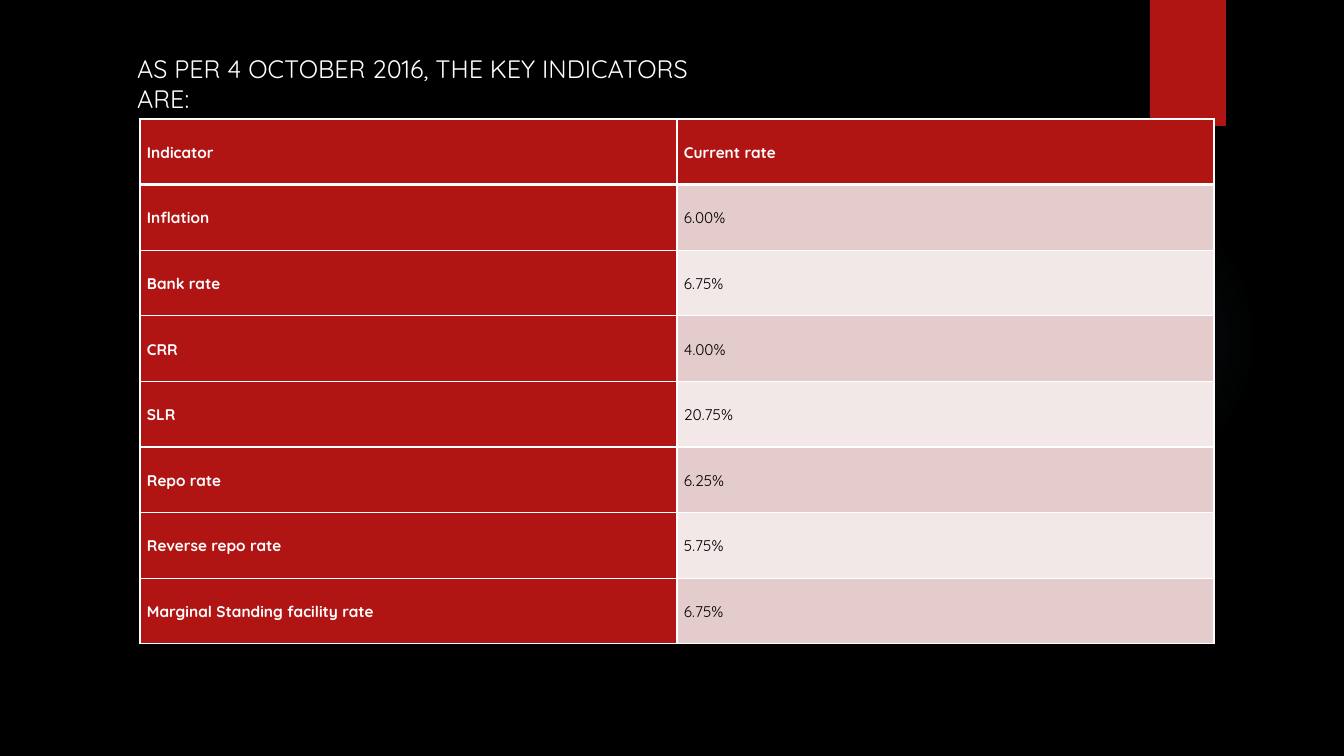
from lxml import etree
from pptx import Presentation
from pptx.dml.color import RGBColor
from pptx.enum.shapes import MSO_SHAPE
from pptx.enum.text import MSO_ANCHOR, PP_ALIGN
from pptx.oxml import parse_xml
from pptx.oxml.ns import nsdecls, qn
from pptx.util import Pt

# Content
TITLE = "AS PER 4 OCTOBER 2016, THE KEY INDICATORS ARE:"
INDICATORS = [
    ("Indicator", "Current rate"),
    ("Inflation", "6.00%"),
    ("Bank rate", "6.75%"),
    ("CRR", "4.00%"),
    ("SLR", "20.75%"),
    ("Repo rate", "6.25%"),
    ("Reverse repo rate", "5.75%"),
    ("Marginal Standing facility rate", "6.75%"),
]

# Style and layout in px
FONT = "Quicksand"
BLACK, WHITE, RED, TEAL = "000000", "FFFFFF", "B01513", "50B9C1"
BANDS = ("F2E8E7", "E4CCCC")
GLOW_STOPS = [(0, 7), (36, 6), (69, 0)]  # position and opacity, percent
SLIDE_SIZE = (1344, 756)
GLOW_BOX = (949, 184, 310, 310)
TAB_BOX = (1150, 0, 76, 126)
TITLE_BOX = (127, 48, 578, 74)
TABLE_BOX = (140, 119, 1074, 525)
EMU_PER_PX = 12192000 / SLIDE_SIZE[0]


def px(length):
    return round(length * EMU_PER_PX)


def color(value):
    return RGBColor.from_string(value)


def add_plain_shape(slide, kind, box, fill):
    shape = slide.shapes.add_shape(kind, *map(px, box))
    shape.shadow.inherit = False
    shape.fill.solid()
    shape.fill.fore_color.rgb = color(fill)
    shape.line.fill.background()
    return shape


def set_radial_fade(shape, value, stops):
    stop_xml = "".join(
        f'<a:gs pos="{position * 1000}"><a:srgbClr val="{value}">'
        f'<a:alpha val="{opacity * 1000}"/></a:srgbClr></a:gs>'
        for position, opacity in stops
    )
    gradient = parse_xml(
        f'<a:gradFill {nsdecls("a")}><a:gsLst>{stop_xml}</a:gsLst>'
        '<a:path path="circle"><a:fillToRect l="50000" t="50000" '
        'r="50000" b="50000"/></a:path></a:gradFill>'
    )
    properties = shape.element.spPr
    properties.replace(properties.find(qn("a:solidFill")), gradient)


def set_borders(cell, widths):
    properties = cell._tc.get_or_add_tcPr()
    for side, width in zip("LRTB", widths):
        line = etree.SubElement(properties, qn(f"a:ln{side}"), w=str(Pt(width)))
        fill = etree.SubElement(line, qn("a:solidFill"))
        etree.SubElement(fill, qn("a:srgbClr"), val=WHITE)


def add_text(paragraph, text, size, value, bold=False):
    run = paragraph.add_run()
    run.text = text
    run.font.name = FONT
    run.font.size = Pt(size)
    run.font.bold = bold
    run.font.color.rgb = color(value)


presentation = Presentation()
presentation.slide_width, presentation.slide_height = map(px, SLIDE_SIZE)
slide = presentation.slides.add_slide(presentation.slide_layouts[5])
slide.background.fill.solid()
slide.background.fill.fore_color.rgb = color(BLACK)

# Background glow and red tab
glow = add_plain_shape(slide, MSO_SHAPE.OVAL, GLOW_BOX, TEAL)
set_radial_fade(glow, TEAL, GLOW_STOPS)
add_plain_shape(slide, MSO_SHAPE.RECTANGLE, TAB_BOX, RED)

# Title
title = slide.shapes.title
title.left, title.top, title.width, title.height = map(px, TITLE_BOX)
title.text_frame.word_wrap = True
title.text_frame.vertical_anchor = MSO_ANCHOR.TOP
title_paragraph = title.text_frame.paragraphs[0]
title_paragraph.alignment = PP_ALIGN.LEFT
add_text(title_paragraph, TITLE, 18, WHITE)

# Indicator table
row_count, column_count = len(INDICATORS), len(INDICATORS[0])
table = slide.shapes.add_table(row_count, column_count, *map(px, TABLE_BOX)).table
for column in table.columns:
    column.width = px(TABLE_BOX[2] / column_count)
for row in table.rows:
    row.height = px(TABLE_BOX[3] / row_count)

for row_index, values in enumerate(INDICATORS):
    for column_index, text in enumerate(values):
        cell = table.cell(row_index, column_index)
        is_header = row_index == 0
        is_red = is_header or column_index == 0
        set_borders(cell, (1, 1, 3 if row_index == 1 else 1, 3 if is_header else 1))
        cell.fill.solid()
        cell.fill.fore_color.rgb = color(RED if is_red else BANDS[row_index % 2])
        cell.vertical_anchor = MSO_ANCHOR.MIDDLE
        cell.margin_left = cell.margin_right = px(7)
        cell.margin_top = cell.margin_bottom = px(3)
        paragraph = cell.text_frame.paragraphs[0]
        paragraph.line_spacing = 1.07
        paragraph.space_after = Pt(8)
        add_text(paragraph, text, 11, WHITE if is_red else BLACK, is_red)

presentation.save("out.pptx")
